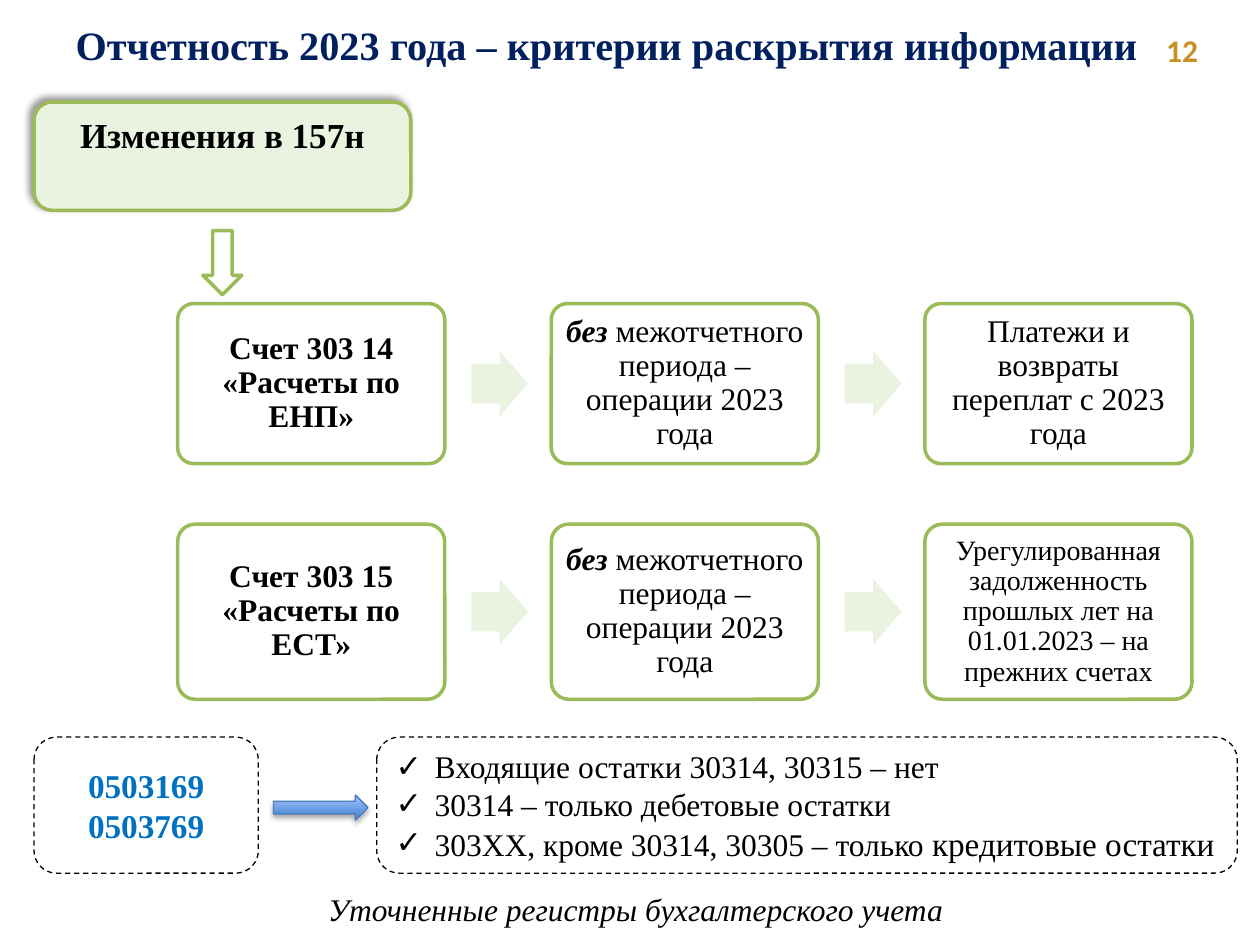
"""Builds the slide on 2023 reporting disclosure criteria."""
import pptx
import pptx.util
import pptx.dml.color
import pptx.enum.dml
import pptx.enum.shapes
import pptx.enum.text
import lxml.etree
from pptx.util import Inches

COLORS = {
    "navy": "002060", "gold": "C79023", "green": "9BBB59", "pale": "E9F3DF",
    "white": "FFFFFF", "black": "000000", "blue": "0070C0",
    "arrow_dark": "3F80CE", "arrow_light": "A4C4FF", "arrow_line": "4B7EBC",
}
SHAPES = pptx.enum.shapes.MSO_SHAPE
ALIGN = pptx.enum.text.PP_ALIGN
ANCHOR = pptx.enum.text.MSO_ANCHOR
RGB = pptx.dml.color.RGBColor.from_string


def add_shape(kind, place, fill=None, line=None, width=2, adjust=()):
    shape = page.shapes.add_shape(kind, *[Inches(value) for value in place])
    shape.shadow.inherit = False
    for index, value in enumerate(adjust):
        shape.adjustments[index] = value
    if fill:
        shape.fill.solid()
        shape.fill.fore_color.rgb = RGB(COLORS[fill])
    else:
        shape.fill.background()
    if line:
        shape.line.color.rgb = RGB(COLORS[line])
        shape.line.width = pptx.util.Pt(width)
    else:
        shape.line.fill.background()
    return shape


def write_text(box, paragraphs, size, color="black", bold=False, italic=False,
               align=ALIGN.CENTER, font="Times New Roman"):
    frame = box.text_frame
    frame.word_wrap = True
    frame.auto_size = pptx.enum.text.MSO_AUTO_SIZE.NONE
    frame.text = "\n".join(paragraphs)
    for para in frame.paragraphs:
        para.alignment = align
        para.space_before = pptx.util.Pt(0)
        for span in para.runs:
            span.font.name = font
            span.font.size = pptx.util.Pt(size)
            span.font.bold = bold
            span.font.italic = italic
            span.font.color.rgb = RGB(COLORS[color])
    return frame


deck = pptx.Presentation()
deck.slide_width, deck.slide_height = Inches(10), Inches(7.5)
page = deck.slides.add_slide(deck.slide_layouts[1])

title = page.shapes.title
title.left, title.top, title.width, title.height = [Inches(v) for v in (0.47, 0.11, 8.7, 0.49)]
frame = write_text(title, ["Отчетность 2023 года – критерии раскрытия информации"],
                   23, "navy", bold=True)
frame.margin_left = frame.margin_right = Inches(0.05)

number = page.shapes.add_textbox(Inches(9.1), Inches(0.2), Inches(0.72), Inches(0.4))
write_text(number, [" 12"], 18, "gold", bold=True, align=ALIGN.LEFT, font="Calibri")

changes = add_shape(SHAPES.ROUNDED_RECTANGLE, (0.27, 0.81, 2.99, 0.86), "pale", "green")
write_text(changes, ["Изменения в 157н"], 20, bold=True).vertical_anchor = ANCHOR.TOP
add_shape(SHAPES.DOWN_ARROW, (1.61, 1.83, 0.31, 0.51), "white", "green")

without_period = "без межотчетного периода – операции 2023 года"
account_rows = [
    (2.41, 1.27, [("Счет 303 14 «Расчеты по ЕНП»", 18), (without_period, 18),
                  ("Платежи и возвраты переплат с 2023 года", 18)]),
    (4.16, 1.39, [("Счет 303 15 «Расчеты по ЕСТ»", 18), (without_period, 18),
                  ("Урегулированная задолженность прошлых лет на 01.01.2023 – на прежних счетах", 16)]),
]
for top, height, cards in account_rows:
    for column, (text, size) in enumerate(cards):
        left = 1.41 + column * 2.965
        card = add_shape(SHAPES.ROUNDED_RECTANGLE, (left, top, 2.12, height),
                         "white", "green", adjust=[0.1])
        frame = write_text(card, [text], size, bold=column == 0)
        frame.margin_left = frame.margin_right = Inches(0.07)
        frame.margin_top = frame.margin_bottom = Inches(0.07)
        para = frame.paragraphs[0]
        para.line_spacing = 0.9
        if column == 1:
            first = para.runs[0]
            rest = para.add_run()
            first.text, rest.text = "без ", text.removeprefix("без ")
            rest.font.name, rest.font.size = first.font.name, first.font.size
            rest.font.color.rgb = first.font.color.rgb
            first.font.bold = first.font.italic = True
        if column < 2:
            add_shape(SHAPES.RIGHT_ARROW, (left + 2.33, top + (height - 0.52) / 2, 0.45, 0.52),
                      "pale", adjust=[0.6, 0.5])

forms, balances = [
    add_shape(SHAPES.ROUNDED_RECTANGLE, (left, 5.85, width, 1.08), line="black", width=0.75)
    for left, width in ((0.27, 1.78), (2.99, 6.83))
]
for panel in (forms, balances):
    panel.line.dash_style = pptx.enum.dml.MSO_LINE.DASH
write_text(forms, ["0503169", "0503769"], 19, "blue", bold=True)

body = page.placeholders[1]
body.left, body.top, body.width, body.height = [Inches(v) for v in (3.04, 5.85, 6.75, 1.08)]
frame = write_text(body, ["Входящие остатки 30314, 30315 – нет",
                          "30314 – только дебетовые остатки",
                          "303ХХ, кроме 30314, 30305 – только "], 18, align=ALIGN.LEFT)
frame.vertical_anchor = ANCHOR.MIDDLE
for para in frame.paragraphs:
    properties = para._p.get_or_add_pPr()
    properties.set("marL", str(Inches(0.31)))
    properties.set("indent", str(-Inches(0.31)))
    bullet = lxml.etree.SubElement(properties, pptx.oxml.ns.qn("a:buChar"))
    bullet.set("char", "✓")
span = para.add_run()
span.text = "кредитовые остатки"
span.font.name, span.font.size = "Times New Roman", pptx.util.Pt(19)
span.font.color.rgb = RGB(COLORS["black"])

pointer = add_shape(SHAPES.RIGHT_ARROW, (2.17, 6.31, 0.75, 0.2), line="arrow_line", width=0.75)
pointer.fill.gradient()
pointer.fill.gradient_angle = 90
for stop, color in zip(pointer.fill.gradient_stops, ("arrow_dark", "arrow_light")):
    stop.color.rgb = RGB(COLORS[color])

for shape, opacity, blur, distance, angle in ((changes, 40, 4, 3, 225),
                                               (pointer, 35, 3.1, 1.8, 90)):
    effects = shape._element.spPr.find(pptx.oxml.ns.qn("a:effectLst"))
    shadow = lxml.etree.SubElement(effects, pptx.oxml.ns.qn("a:outerShdw"))
    shadow.set("blurRad", str(pptx.util.Pt(blur)))
    shadow.set("dist", str(pptx.util.Pt(distance)))
    shadow.set("dir", str(angle * 60000))
    shadow.set("rotWithShape", "0")
    tint = lxml.etree.SubElement(shadow, pptx.oxml.ns.qn("a:srgbClr"), val=COLORS["black"])
    lxml.etree.SubElement(tint, pptx.oxml.ns.qn("a:alpha"), val=str(opacity * 1000))

footer = add_shape(SHAPES.ROUNDED_RECTANGLE, (0.27, 7.06, 9.55, 0.31))
write_text(footer, ["Уточненные регистры бухгалтерского учета"], 18, italic=True)

deck.save("out.pptx")
